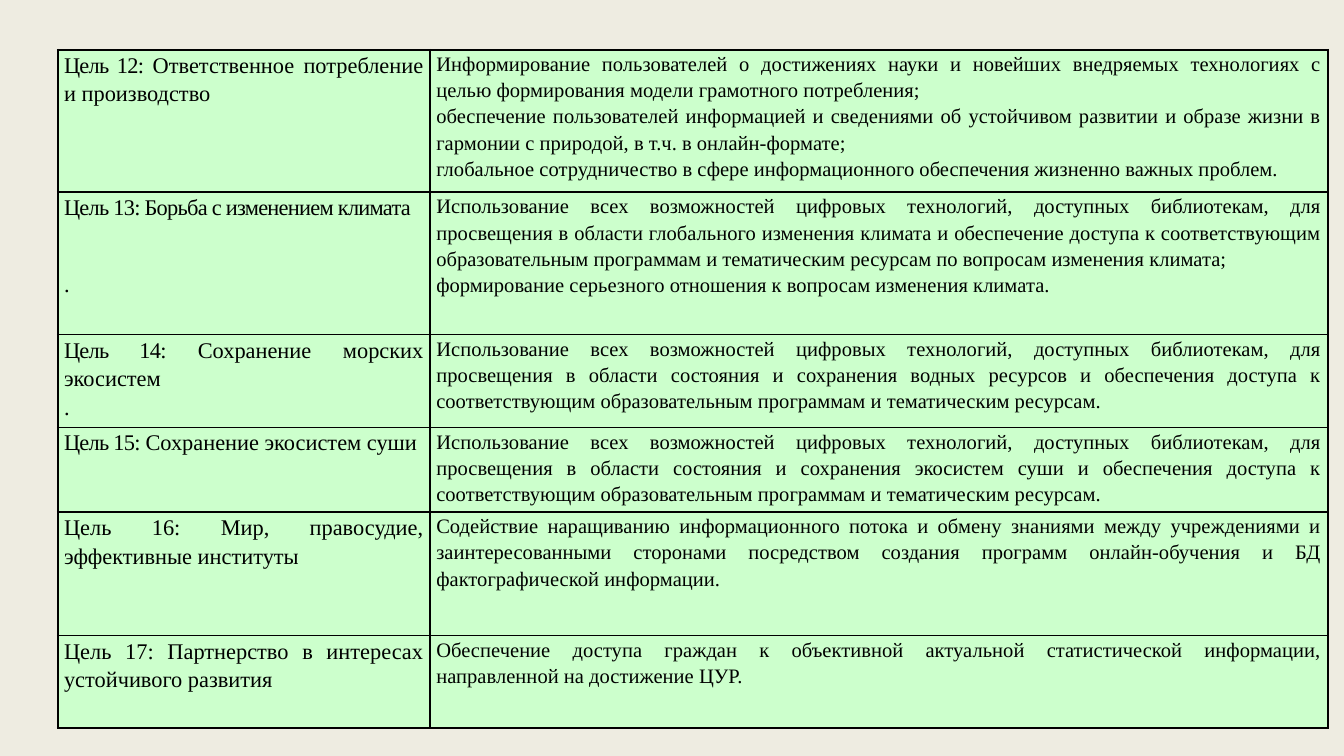
from lxml import etree
from pptx import Presentation
from pptx.dml.color import RGBColor
from pptx.enum.text import MSO_ANCHOR, PP_ALIGN
from pptx.oxml.ns import qn
from pptx.util import Inches, Pt

JUSTIFY = PP_ALIGN.JUSTIFY
TOP = MSO_ANCHOR.TOP

BACKGROUND = RGBColor(0xEE, 0xEC, 0xE1)
CELL_FILL = RGBColor(0xCC, 0xFF, 0xCC)
BLACK = RGBColor(0, 0, 0)

# A 16:9 slide on a grid of square units, 1000 to its width
SLIDE_WIDTH = Inches(10)
SLIDE_HEIGHT = SLIDE_WIDTH * 9 // 16
UNIT = SLIDE_WIDTH // 1000

FONT = "Times New Roman"
GOAL_SIZE, TASK_SIZE = 12, 11
TIGHT = -0.4  # letter spacing in points
DOT_GAP = 26  # space above the lone dot of goal 13
SIDE_MARGIN = Pt(3.4)

TABLE_LEFT, TABLE_TOP = 43, 37
COLUMN_WIDTHS = [277, 668]

# Row height, goal paragraphs (text, tightened part, space before), tasks
ROWS = [
    (106, [("Цель 12: Ответственное потребление и производство", "Цель 12: ", 0)],
     ["Информирование пользователей о достижениях науки и новейших внедряемых "
      "технологиях с целью формирования модели грамотного потребления;",
      "обеспечение пользователей информацией и сведениями об устойчивом развитии "
      "и образе жизни в гармонии с природой, в т.ч. в онлайн-формате;",
      "глобальное сотрудничество в сфере информационного обеспечения "
      "жизненно важных проблем."]),
    (106, [("Цель 13: Борьба с изменением климата",
            "Цель 13: Борьба с изменением климата", 0), (".", "", DOT_GAP)],
     ["Использование всех возможностей цифровых технологий, доступных библиотекам, "
      "для просвещения в области глобального изменения климата и обеспечение "
      "доступа к соответствующим образовательным программам и тематическим "
      "ресурсам по вопросам изменения климата;",
      "формирование серьезного отношения к вопросам изменения климата."]),
    (69, [("Цель 14: Сохранение морских экосистем", "Цель 14: ", 0), (".", "", 0)],
     ["Использование всех возможностей цифровых технологий, доступных библиотекам, "
      "для просвещения в области состояния и сохранения водных ресурсов и "
      "обеспечения доступа к соответствующим образовательным программам и "
      "тематическим ресурсам."]),
    (63, [("Цель 15: Сохранение экосистем суши", "Цель 15: ", 0)],
     ["Использование всех возможностей цифровых технологий, доступных библиотекам, "
      "для просвещения в области состояния и сохранения экосистем суши и "
      "обеспечения доступа к соответствующим образовательным программам и "
      "тематическим ресурсам."]),
    (92, [("Цель 16: Мир, правосудие, эффективные институты", "", 0)],
     ["Содействие наращиванию информационного потока и обмену знаниями между "
      "учреждениями и заинтересованными сторонами посредством создания программ "
      "онлайн-обучения и БД фактографической информации."]),
    (69, [("Цель 17: Партнерство в интересах устойчивого развития", "", 0)],
     ["Обеспечение доступа граждан к объективной актуальной статистической "
      "информации, направленной на достижение ЦУР."]),
]


class SlideBuilder:
    """Holds the style and the current slide."""

    def __init__(self, presentation):
        self.slide = presentation.slides.add_slide(presentation.slide_layouts[6])
        fill = self.slide.background.fill
        fill.solid()
        fill.fore_color.rgb = BACKGROUND

    def table(self, left, top, widths, heights):
        table = self.slide.shapes.add_table(
            len(heights), len(widths), left * UNIT, top * UNIT,
            sum(widths) * UNIT, sum(heights) * UNIT).table
        for column, width in zip(table.columns, widths):
            column.width = width * UNIT
        for row, height in zip(table.rows, heights):
            row.height = height * UNIT
        return table

    def cell(self, cell, paragraphs, size):
        cell.margin_left = cell.margin_right = SIDE_MARGIN
        cell.margin_top = cell.margin_bottom = 0
        cell.vertical_anchor = TOP
        self.borders(cell)
        cell.fill.solid()
        cell.fill.fore_color.rgb = CELL_FILL
        cell.text_frame.text = "\n".join(text for text, _, _ in paragraphs)
        for paragraph, (text, tight, gap) in zip(cell.text_frame.paragraphs, paragraphs):
            self.paragraph(paragraph, text, tight, gap, size)

    def paragraph(self, paragraph, text, tight, gap, size):
        paragraph.alignment = JUSTIFY
        paragraph.line_spacing = 1.15
        paragraph.space_before = Pt(gap)
        # Split off the tightened beginning into its own run
        if tight:
            first = paragraph.runs[0]
            first.text = tight
            if text != tight:
                paragraph.add_run().text = text[len(tight):]
        for run in paragraph.runs:
            run.font.name = FONT
            run.font.size = Pt(size)
            run.font.color.rgb = BLACK
        if tight:
            first.font._element.set("spc", str(round(TIGHT * 100)))

    def borders(self, cell):
        properties = cell._tc.get_or_add_tcPr()
        for side in ("a:lnL", "a:lnR", "a:lnT", "a:lnB"):
            line = etree.SubElement(properties, qn(side), w=str(Pt(1)))
            fill = etree.SubElement(line, qn("a:solidFill"))
            etree.SubElement(fill, qn("a:srgbClr"), val=str(BLACK))


def main():
    presentation = Presentation()
    presentation.slide_width = SLIDE_WIDTH
    presentation.slide_height = SLIDE_HEIGHT
    builder = SlideBuilder(presentation)

    # Goals on the left, library tasks on the right
    table = builder.table(TABLE_LEFT, TABLE_TOP, COLUMN_WIDTHS,
                          [height for height, _, _ in ROWS])
    for index, (_, goal, tasks) in enumerate(ROWS):
        builder.cell(table.cell(index, 0), goal, GOAL_SIZE)
        builder.cell(table.cell(index, 1), [(task, "", 0) for task in tasks], TASK_SIZE)

    presentation.save("out.pptx")


if __name__ == "__main__":
    main()
